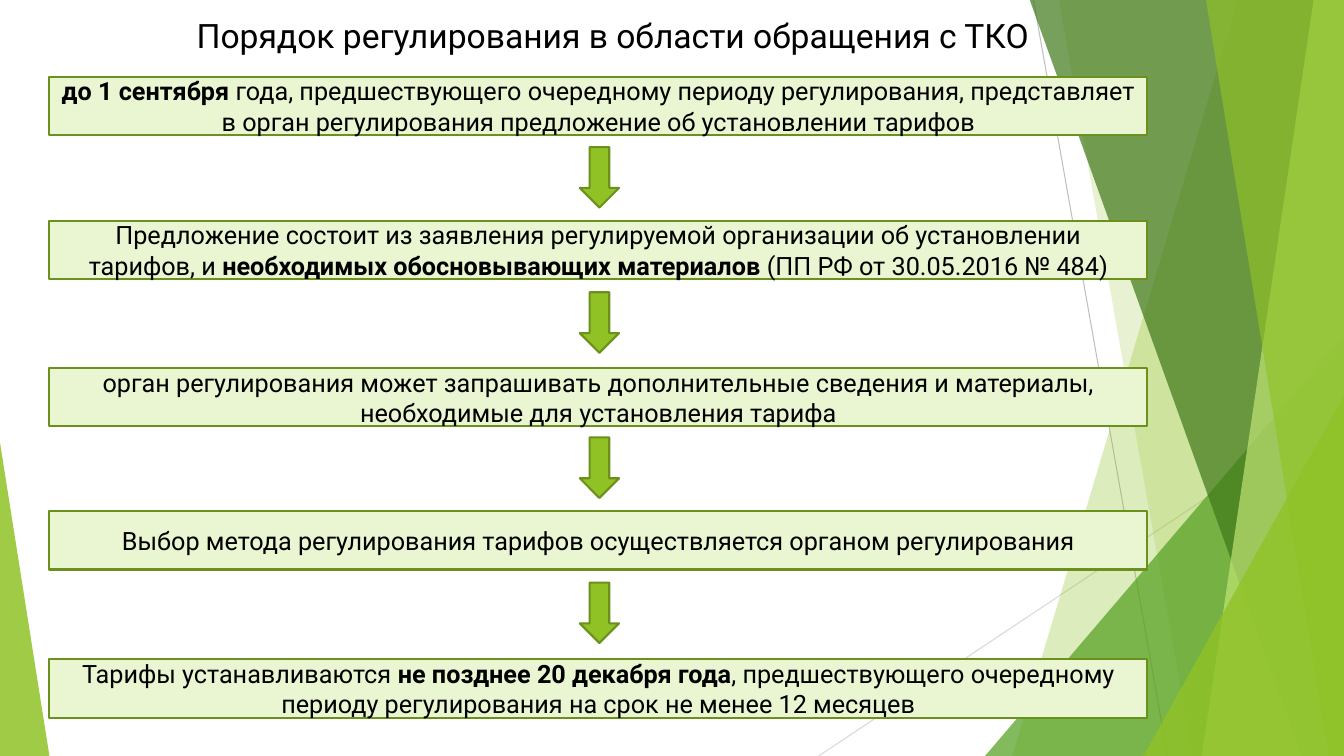
from lxml.etree import SubElement
from pptx import Presentation
from pptx.dml.color import RGBColor
from pptx.enum.shapes import MSO_CONNECTOR, MSO_SHAPE
from pptx.enum.text import MSO_ANCHOR, PP_ALIGN
from pptx.oxml.ns import qn
from pptx.util import Inches, Pt

COLORS = {
    "text": "000000", "pale": "EAF6D1", "border": "6B901C", "green": "90C226",
    "leaf": "54A021", "forest": "3F7819", "lime": "C0E474",
    "gray": "BFBFBF", "light_gray": "D9D9D9",
}
FONT = "Roboto"
TITLE = "Порядок регулирования в области обращения с ТКО"
BOX_LEFT, BOX_WIDTH, BOX_HEIGHT = 0.49, 10.89, 0.58
ARROW_LEFT, ARROW_TOP, ARROW_STEP = 5.75, 1.46, 1.44
ARROW_WIDTH, ARROW_HEIGHT = 0.39, 0.6

STEPS = [
    (0.76, [("до 1 сентября", True),
            (" года, предшествующего очередному периоду регулирования, "
             "представляет в орган регулирования предложение об "
             "установлении тарифов", False)]),
    (2.19, [("Предложение состоит из заявления регулируемой организации "
             "об установлении тарифов, и ", False),
            ("необходимых обосновывающих материалов ", True),
            ("(ПП РФ от 30.05.2016 № 484)", False)]),
    (3.65, [("орган регулирования может запрашивать дополнительные сведения "
             "и материалы, необходимые для установления тарифа", False)]),
    (5.07, [("Выбор метода регулирования тарифов осуществляется органом "
             "регулирования", False)]),
    (6.54, [("Тарифы устанавливаются ", False),
            ("не позднее 20 декабря года", True),
            (", предшествующего очередному периоду регулирования на срок "
             "не менее 12 месяцев", False)]),
]


def color(name):
    return RGBColor.from_string(COLORS[name])


def set_values(target, values):
    for name, value in values.items():
        setattr(target, name, value)


def paint(shape, fill, border=None, opacity=None):
    shape.shadow.inherit = False
    shape.fill.solid()
    shape.fill.fore_color.rgb = color(fill)
    if opacity:
        tint = shape.fill._xPr.find(qn("a:solidFill")).find(qn("a:srgbClr"))
        SubElement(tint, qn("a:alpha")).set("val", str(opacity * 1000))
    if border:
        shape.line.color.rgb = color(border)
        shape.line.width = Pt(1.5)
    else:
        shape.line.fill.background()


def write(shape, spans, size, align, anchor):
    frame = shape.text_frame
    set_values(frame, {
        "word_wrap": True, "vertical_anchor": anchor,
        "margin_left": Inches(0.1), "margin_right": Inches(0.1),
        "margin_top": 0, "margin_bottom": 0,
    })
    para = frame.paragraphs[0]
    set_values(para, {"alignment": align, "line_spacing": 1.0})
    for text, bold in spans:
        span = para.add_run()
        span.text = text
        set_values(span.font, {"name": FONT, "size": Pt(size), "bold": bold})
        span.font.color.rgb = color("text")


def add_preset(page, kind, left, top, width, height):
    return page.shapes.add_shape(
        kind, Inches(left), Inches(top), Inches(width), Inches(height))


def add_line(page, start, end, tone):
    points = [Inches(value) for value in start + end]
    line = page.shapes.add_connector(MSO_CONNECTOR.STRAIGHT, *points)
    line.line.color.rgb = color(tone)
    line.line.width = Pt(0.75)
    SubElement(line.element.spPr, qn("a:effectLst"))


def add_facet(page, top_left, bottom_left, fill, opacity):
    corners = [(13.33, -0.01), (13.33, 7.5), (bottom_left, 7.5)]
    builder = page.shapes.build_freeform(Inches(top_left), Inches(-0.01))
    builder.add_line_segments([(Inches(x), Inches(y)) for x, y in corners])
    paint(builder.convert_to_shape(), fill, opacity=opacity)


def add_wedge(page, left, top, width, apex, fill, opacity):
    wedge = add_preset(page, MSO_SHAPE.ISOSCELES_TRIANGLE,
                       left, top, width, 7.5 - top)
    wedge.adjustments[0] = apex
    paint(wedge, fill, opacity=opacity)


def add_backdrop(page):
    add_line(page, (10.25, 0), (11.58, 7.5), "gray")
    add_line(page, (13.33, 4.03), (8.12, 7.5), "light_gray")
    add_facet(page, 12.28, 10.04, "green", 30)
    add_facet(page, 10.5, 11.83, "green", 20)
    add_wedge(page, 9.77, 3.33, 3.56, 1, "leaf", 72)
    add_facet(page, 10.21, 12.91, "forest", 70)
    add_facet(page, 13.03, 11.92, "lime", 70)
    add_facet(page, 11.96, 13.18, "green", 65)
    add_wedge(page, 11.34, 3.93, 1.99, 1, "green", 80)
    add_wedge(page, 0, 4.39, 0.49, 0, "green", 85)


def add_title(page):
    title = page.shapes.title
    set_values(title, {"left": Inches(1.85), "top": Inches(0.1),
                       "width": Inches(8.94), "height": Inches(0.5)})
    write(title, [(TITLE, False)], 24, PP_ALIGN.LEFT, MSO_ANCHOR.MIDDLE)
    title.element.getparent().append(title.element)


def add_step(page, top, spans):
    box = add_preset(page, MSO_SHAPE.RECTANGLE,
                     BOX_LEFT, top, BOX_WIDTH, BOX_HEIGHT)
    paint(box, "pale", "border")
    write(box, spans, 18, PP_ALIGN.CENTER, MSO_ANCHOR.MIDDLE)


def add_arrow(page, index):
    arrow = add_preset(page, MSO_SHAPE.DOWN_ARROW, ARROW_LEFT,
                       ARROW_TOP + index * ARROW_STEP,
                       ARROW_WIDTH, ARROW_HEIGHT)
    paint(arrow, "green", "border")


def main():
    deck = Presentation()
    set_values(deck, {"slide_width": Inches(13.33),
                      "slide_height": Inches(7.5)})
    page = deck.slides.add_slide(deck.slide_layouts[5])
    add_backdrop(page)
    add_title(page)
    for top, spans in STEPS:
        add_step(page, top, spans)
    for index in range(len(STEPS) - 1):
        add_arrow(page, index)
    deck.save("out.pptx")


if __name__ == "__main__":
    main()
